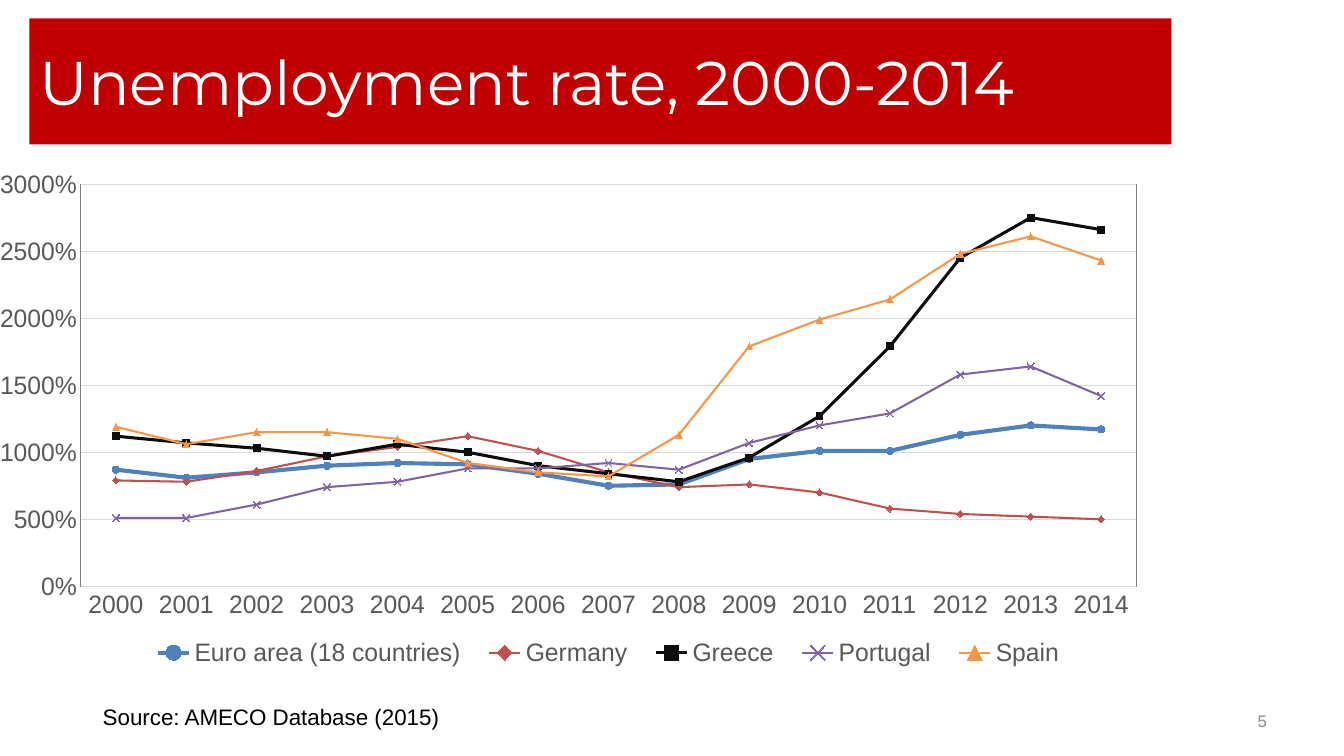
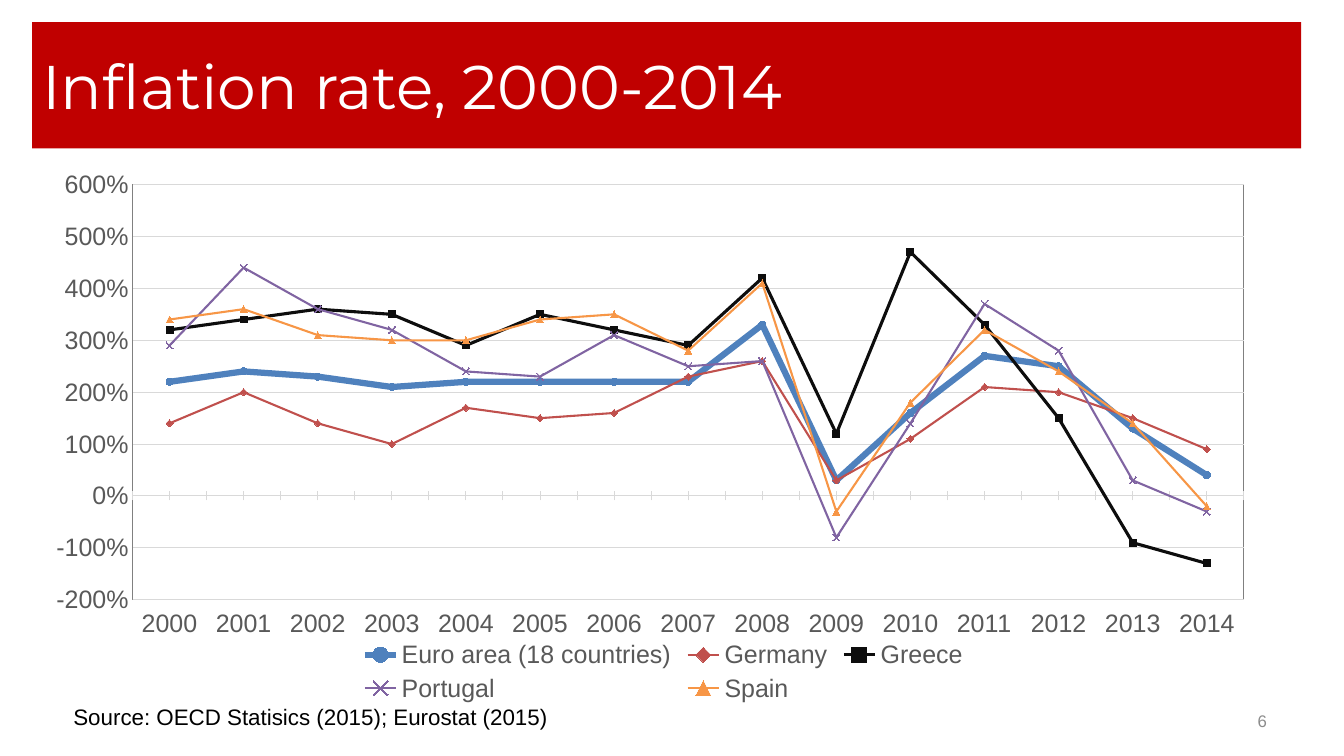
import pptx
import pptx.chart.data
import pptx.dml.color
import pptx.enum.chart
import pptx.enum.text
import pptx.oxml
import pptx.oxml.ns
import pptx.util

Cm, Pt = pptx.util.Cm, pptx.util.Pt
RGB = pptx.dml.color.RGBColor.from_string
qn, nsdecls = pptx.oxml.ns.qn, pptx.oxml.ns.nsdecls
XL = pptx.enum.chart
ALIGN, ANCHOR = pptx.enum.text.PP_ALIGN, pptx.enum.text.MSO_ANCHOR
TICK, LABELS = XL.XL_TICK_MARK, XL.XL_TICK_LABEL_POSITION

COLORS = {
    "band": "C00000", "title": "FFFFFF", "source": "000000", "number": "8C8C8C",
    "label": "595959", "grid": "D9D9D9", "frame": "808080",
    "blue": "4F81BD", "red": "C0504D", "black": "0D0D0D",
    "purple": "8064A2", "orange": "F79646",
}
TITLE_FONT, BODY_FONT = "Montserrat", "Arial"
YEARS = [str(year) for year in range(2000, 2015)]

# Country: line colour, line width (the euro area sets its own per slide), marker
MARKER = XL.XL_MARKER_STYLE
SERIES = {
    "Euro area (18 countries)": ("blue", None, MARKER.CIRCLE),
    "Germany": ("red", 1.5, MARKER.DIAMOND),
    "Greece": ("black", 2.25, MARKER.SQUARE),
    "Portugal": ("purple", 1.5, MARKER.X),
    "Spain": ("orange", 1.5, MARKER.TRIANGLE),
}

# Boxes are left, top, width, height in cm; plot and legend are shares of the chart
SLIDES = [
    {
        "title": "Unemployment rate, 2000-2014", "number": "5",
        "band": (0.74, 0.46, 28.78, 3.18),
        "chart": (0, 3.84, 29.21, 13.34),
        "plot": (0.05, 0.06, 0.93, 0.76), "legend": (0.1, 0.91, 0.83, 0.07),
        "scale": (0, 30, 5), "minor_tick": TICK.NONE, "labels": LABELS.NEXT_TO_AXIS,
        "euro_width": 3,
        "source": "Source: AMECO Database (2015)", "source_left": 2.34,
        "values": [
            (8.7, 8.1, 8.5, 9, 9.2, 9.1, 8.4, 7.5, 7.6, 9.5, 10.1, 10.1, 11.3, 12, 11.7),
            (7.9, 7.8, 8.6, 9.7, 10.4, 11.2, 10.1, 8.5, 7.4, 7.6, 7, 5.8, 5.4, 5.2, 5),
            (11.2, 10.7, 10.3, 9.7, 10.6, 10, 9, 8.4, 7.8, 9.6, 12.7, 17.9, 24.5, 27.5, 26.6),
            (5.1, 5.1, 6.1, 7.4, 7.8, 8.8, 8.8, 9.2, 8.7, 10.7, 12, 12.9, 15.8, 16.4, 14.2),
            (11.9, 10.6, 11.5, 11.5, 11, 9.2, 8.5, 8.2, 11.3, 17.9, 19.9, 21.4, 24.8, 26.1, 24.3),
        ],
    },
    {
        "title": "Inflation rate, 2000-2014", "number": "6",
        "band": (0.81, 0.56, 31.98, 3.18),
        "chart": (1.42, 4.06, 30.35, 13.77),
        "plot": (0.055, 0.043, 0.931, 0.76), "legend": None,
        "scale": (-2, 6, 1), "minor_tick": TICK.CROSS, "labels": LABELS.LOW,
        "euro_width": 4.5,
        "source": "Source: OECD Statisics (2015); Eurostat (2015)", "source_left": 1.6,
        "values": [
            (2.2, 2.4, 2.3, 2.1, 2.2, 2.2, 2.2, 2.2, 3.3, 0.3, 1.6, 2.7, 2.5, 1.3, 0.4),
            (1.4, 2, 1.4, 1, 1.7, 1.5, 1.6, 2.3, 2.6, 0.3, 1.1, 2.1, 2, 1.5, 0.9),
            (3.2, 3.4, 3.6, 3.5, 2.9, 3.5, 3.2, 2.9, 4.2, 1.2, 4.7, 3.3, 1.5, -0.9, -1.3),
            (2.9, 4.4, 3.6, 3.2, 2.4, 2.3, 3.1, 2.5, 2.6, -0.8, 1.4, 3.7, 2.8, 0.3, -0.3),
            (3.4, 3.6, 3.1, 3, 3, 3.4, 3.5, 2.8, 4.1, -0.3, 1.8, 3.2, 2.4, 1.4, -0.2),
        ],
    },
]


def set_text(sp, text, font, size, color, align=ALIGN.LEFT, anchor=ANCHOR.MIDDLE):
    tf = sp.text_frame
    tf.text = text
    tf.word_wrap = True
    tf.auto_size = pptx.enum.text.MSO_AUTO_SIZE.NONE
    tf.vertical_anchor = anchor
    p = tf.paragraphs[0]
    p.alignment = align
    r = p.runs[0]
    r.font.name, r.font.size = font, Pt(size)
    r.font.color.rgb = RGB(COLORS[color])


def set_line(line, color, width):
    line.color.rgb = RGB(COLORS[color])
    line.width = Pt(width)


prs = pptx.Presentation()
prs.slide_width, prs.slide_height = Cm(33.87), Cm(19.05)
title_only = prs.slide_layouts[5]

for info in SLIDES:
    s = prs.slides.add_slide(title_only)

    # Title band
    title = s.shapes.title
    title.left, title.top, title.width, title.height = map(Cm, info["band"])
    title.fill.solid()
    title.fill.fore_color.rgb = RGB(COLORS["band"])
    set_text(title, info["title"], TITLE_FONT, 44, "title")

    # Line chart
    data = pptx.chart.data.CategoryChartData()
    data.categories = YEARS
    for name, values in zip(SERIES, info["values"]):
        data.add_series(name, values)
    chart = s.shapes.add_chart(
        XL.XL_CHART_TYPE.LINE_MARKERS, *map(Cm, info["chart"]), data).chart
    chart.has_title = False
    chart.font.name, chart.font.size = BODY_FONT, Pt(18)
    chart.font.color.rgb = RGB(COLORS["label"])
    chart.has_legend = True
    chart.legend.position = XL.XL_LEGEND_POSITION.BOTTOM
    chart.legend.include_in_layout = False

    # Series
    for series, (color, width, marker) in zip(chart.plots[0].series, SERIES.values()):
        series.smooth = False
        set_line(series.format.line, color, width or info["euro_width"])
        series.marker.style, series.marker.size = marker, 5
        set_line(series.marker.format.line, color, 0.75)
        fill = series.marker.format.fill
        if marker == MARKER.X:
            fill.background()
        else:
            fill.solid()
            fill.fore_color.rgb = RGB(COLORS[color])

    # Axes
    years, rates = chart.category_axis, chart.value_axis
    for axis in (years, rates):
        axis.major_tick_mark = axis.minor_tick_mark = TICK.NONE
    years.minor_tick_mark = info["minor_tick"]
    years.tick_label_position = info["labels"]
    set_line(years.format.line, "grid", 0.75)
    rates.minimum_scale, rates.maximum_scale, rates.major_unit = info["scale"]
    rates.tick_labels.number_format = "0%"
    rates.tick_labels.number_format_is_linked = False
    rates.format.line.fill.background()
    set_line(rates.major_gridlines.format.line, "grid", 0.75)

    # Plot area and legend positions: element, box, index of its layout, layout target
    plot_area = chart.element.find(".//" + qn("c:plotArea"))
    legend = chart.element.find(".//" + qn("c:legend"))
    for element, box, index, target in (
        (plot_area, info["plot"], 0, '<c:layoutTarget val="inner"/>'),
        (legend, info["legend"], 1, ""),
    ):
        if box is None:
            continue
        for layout in element.findall(qn("c:layout")):
            element.remove(layout)
        places = "".join(f'<c:{tag} val="{val}"/>' for tag, val in zip("xywh", box))
        element.insert(index, pptx.oxml.parse_xml(
            f'<c:layout {nsdecls("c")}><c:manualLayout>{target}<c:xMode val="edge"/>'
            f'<c:yMode val="edge"/>{places}</c:manualLayout></c:layout>'))

    # Plot area frame
    plot_area.append(pptx.oxml.parse_xml(
        f'<c:spPr {nsdecls("c", "a")}><a:noFill/><a:ln w="9525"><a:solidFill>'
        f'<a:srgbClr val="{COLORS["frame"]}"/></a:solidFill></a:ln></c:spPr>'))

    # Source and slide number
    sp = s.shapes.add_textbox(Cm(info["source_left"]), Cm(17.6), Cm(29.21), Cm(0.94))
    set_text(sp, info["source"], BODY_FONT, 16, "source", anchor=ANCHOR.TOP)
    sp = s.shapes.add_textbox(Cm(24.28), Cm(17.65), Cm(7.9), Cm(1.02))
    set_text(sp, info["number"], BODY_FONT, 12, "number", align=ALIGN.RIGHT)

prs.save("out.pptx")
